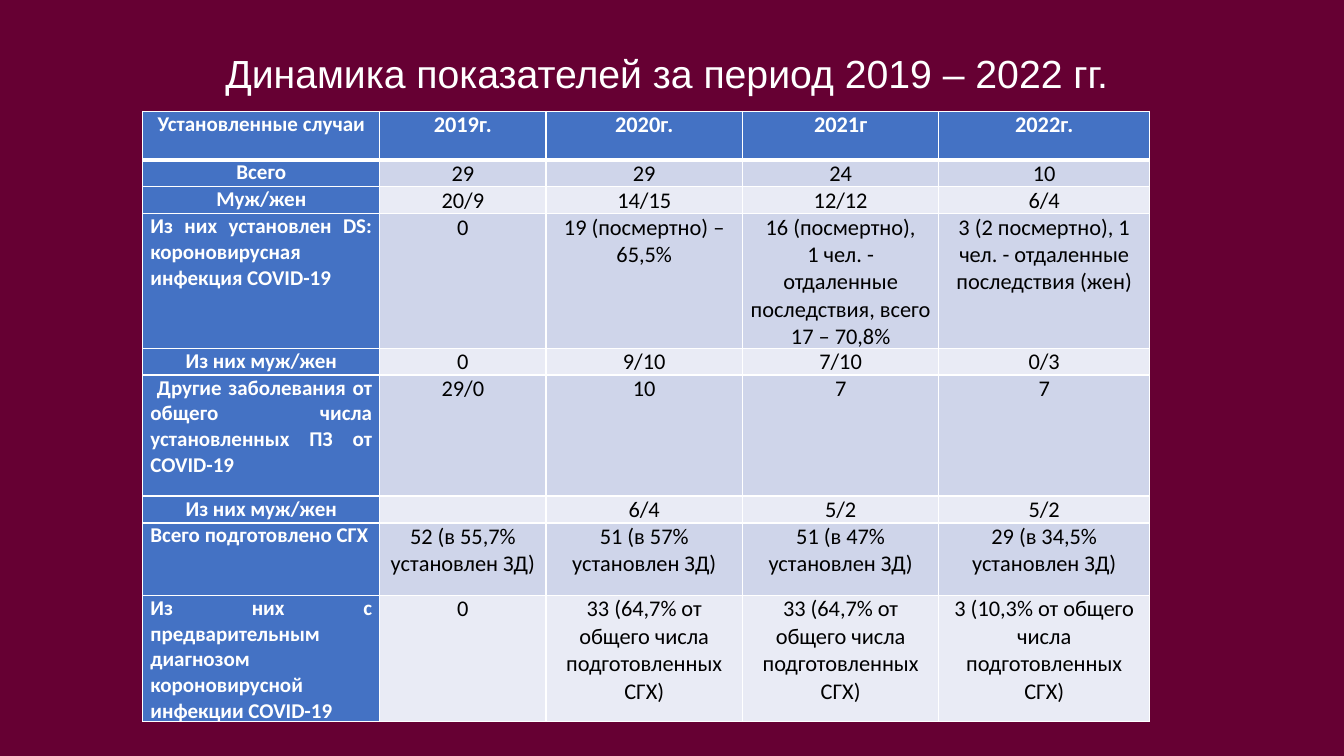
from lxml.etree import SubElement
from pptx import Presentation
from pptx.dml.color import RGBColor
from pptx.enum.text import MSO_AUTO_SIZE, PP_ALIGN
from pptx.oxml.ns import qn
from pptx.util import Cm, Pt

WINE = RGBColor(0x66, 0x00, 0x33)
WHITE = RGBColor(0xFF, 0xFF, 0xFF)
BLACK = RGBColor(0x00, 0x00, 0x00)
BLUE = RGBColor(0x44, 0x72, 0xC4)
BANDS = (RGBColor(0xE9, 0xEB, 0xF5), RGBColor(0xCF, 0xD5, 0xEA))

TITLE = "Динамика показателей за период 2019 – 2022 гг. "
WIDTHS = (5.97, 4.19, 4.95, 4.95, 5.31)
HEIGHTS = (1.22, 0.61, 0.61, 3.05, 0.61, 3.05, 0.61, 1.83, 3.05)
JUSTIFIED = (3, 5, 7, 8)
ROWS = (
    ("Установленные случаи", "2019г.", "2020г.", "2021г", "2022г."),
    ("Всего", "29", "29", "24", "10"),
    ("Муж/жен", "20/9", "14/15", "12/12", "6/4"),
    ("Из них установлен DS: короновирусная инфекция COVID-19", "0",
     "19 (посмертно) – 65,5%",
     "16 (посмертно),\n1 чел. - отдаленные последствия, всего 17 – 70,8%",
     "3 (2 посмертно), 1 чел. - отдаленные последствия (жен)"),
    ("Из них муж/жен", "0", "9/10", "7/10", "0/3"),
    (" Другие заболевания от общего числа установленных ПЗ от COVID-19",
     "29/0", "10", "7", "7"),
    ("Из них муж/жен", "", "6/4", "5/2", "5/2"),
    ("Всего подготовлено СГХ", "52 (в 55,7% установлен ЗД)",
     "51 (в 57% установлен ЗД)", "51 (в 47% установлен ЗД)",
     "29 (в 34,5% установлен ЗД)"),
    ("Из них с предварительным диагнозом короновирусной\nинфекции COVID-19",
     "0", "33 (64,7% от общего числа подготовленных СГХ)",
     "33 (64,7% от общего числа подготовленных СГХ)",
     "3 (10,3% от общего числа подготовленных СГХ)"),
)


def style(frame, font, size, color, bold, align):
    """Format every paragraph and run of a text frame."""
    for para in frame.paragraphs:
        para.alignment = align
        for run in para.runs:
            run.font.name = font
            run.font.size = Pt(size)
            run.font.bold = bold
            run.font.color.rgb = color
        if not para.runs:
            SubElement(para._p, qn("a:endParaRPr"), sz=str(size * 100))


def border(cell, row):
    """Draw white cell edges, thicker below the header row."""
    props = cell._tc.get_or_add_tcPr()
    thick = {"T": row == 1, "B": row == 0}
    for spot, side in enumerate("LRTB"):
        width = Pt(3 if thick.get(side) else 1)
        line = SubElement(props, qn("a:ln" + side), w=str(width))
        fill = SubElement(line, qn("a:solidFill"))
        SubElement(fill, qn("a:srgbClr"), val=str(WHITE))
        props.insert(spot, line)


def fill_cell(cell, text, row, col):
    """Write one cell with the look of its row and column."""
    head = row == 0 or col == 0
    cell.margin_left = cell.margin_right = Cm(0.19)
    cell.margin_top = cell.margin_bottom = 0
    cell.fill.solid()
    cell.fill.fore_color.rgb = BLUE if head else BANDS[row % 2]
    cell.text_frame.text = text
    wide = col == 0 and row in JUSTIFIED
    style(cell.text_frame, "Calibri", 15 if col == 0 else 16,
          WHITE if head else BLACK, head,
          PP_ALIGN.JUSTIFY if wide else PP_ALIGN.CENTER)
    border(cell, row)


def add_title(slide, left, top, width, height):
    """Place the centred heading in the given box."""
    frame = slide.shapes.add_textbox(left, top, width, height).text_frame
    frame.word_wrap = True
    frame.auto_size = MSO_AUTO_SIZE.SHAPE_TO_FIT_TEXT
    frame.text = TITLE
    style(frame, "Arial", 28, WHITE, False, PP_ALIGN.CENTER)


def add_grid(slide, left, top, width, height):
    """Place the table of yearly figures in the given box."""
    table = slide.shapes.add_table(
        len(ROWS), len(WIDTHS), left, top, width, height).table
    for column, part in zip(table.columns, WIDTHS):
        column.width = int(width * part / sum(WIDTHS))
    for line, part in zip(table.rows, HEIGHTS):
        line.height = int(height * part / sum(HEIGHTS))
    for row, texts in enumerate(ROWS):
        for col, text in enumerate(texts):
            fill_cell(table.cell(row, col), text, row, col)


def main():
    """Build the slide and save it."""
    deck = Presentation()
    deck.slide_width, deck.slide_height = Cm(33.87), Cm(19.05)
    slide = deck.slides.add_slide(deck.slide_layouts[6])
    slide.background.fill.solid()
    slide.background.fill.fore_color.rgb = WINE
    add_title(slide, 0, Cm(1.12), deck.slide_width, Cm(1.45))
    add_grid(slide, Cm(3.6), Cm(2.81), Cm(25.37), Cm(14.64))
    deck.save("out.pptx")


if __name__ == "__main__":
    main()
